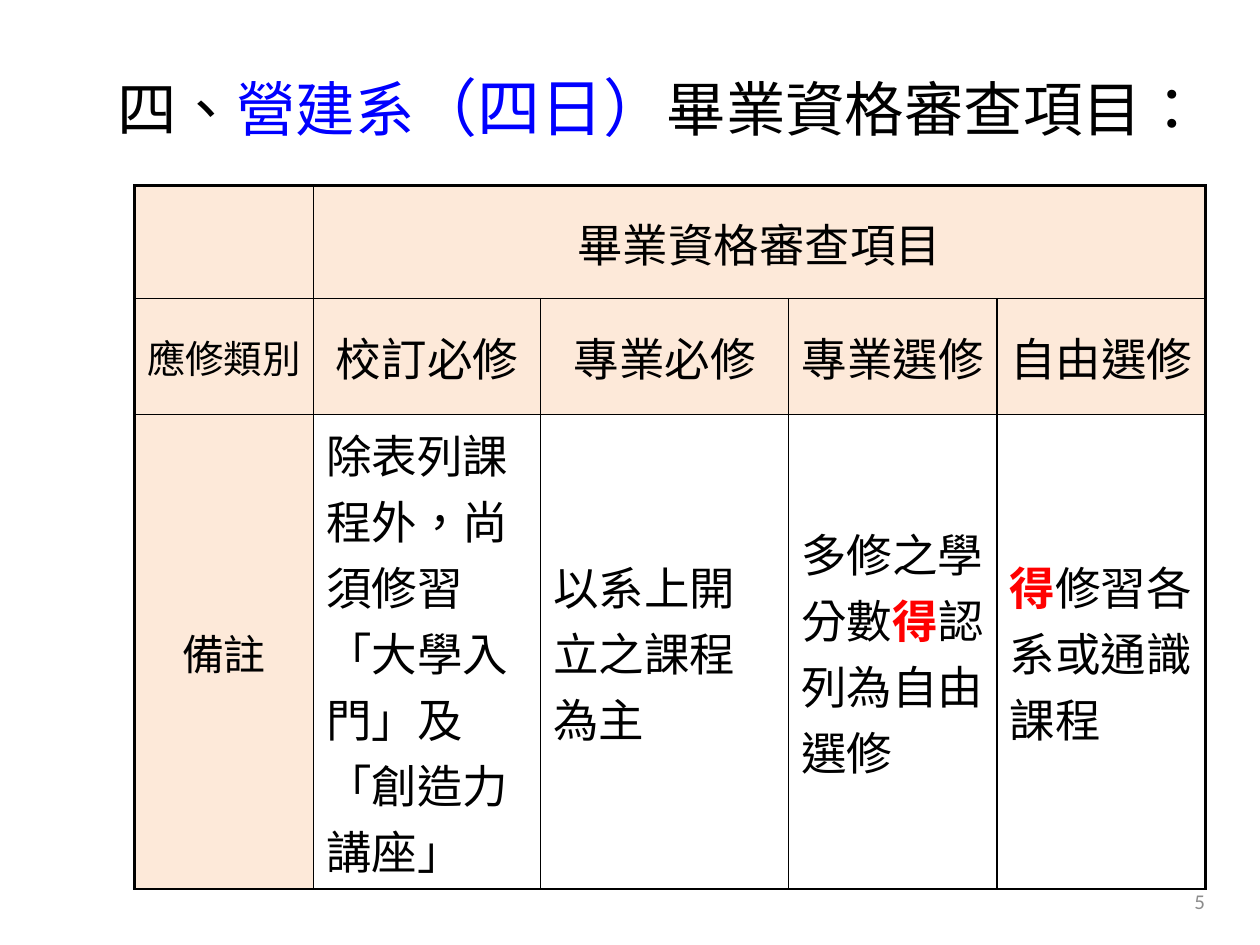
import pptx
import pptx.dml.color
import pptx.enum.lang
import pptx.enum.text
import pptx.oxml
import pptx.oxml.ns
import pptx.util
from pptx.util import Cm

COLORS = {
    "text": "000000",
    "department": "0000FF",
    "emphasis": "FF0000",
    "number": "8C8C8C",
    "header": "FDE9D9",
    "border": "000000",
}
CJK = "Noto Sans CJK JP"
LATIN = "Times New Roman"
LEFT = pptx.enum.text.PP_ALIGN.LEFT
CENTER = pptx.enum.text.PP_ALIGN.CENTER
RIGHT = pptx.enum.text.PP_ALIGN.RIGHT
MIDDLE = pptx.enum.text.MSO_ANCHOR.MIDDLE
COL_WIDTHS = [3.61, 4.58, 5, 4.2, 4.2]
ROW_HEIGHTS = [2.28, 2.34, 9.56]


def rgb(name):
    return pptx.dml.color.RGBColor.from_string(COLORS[name])


def add_run(p, text, size=26, color="text", bold=False, font=LATIN):
    r = p.add_run()
    r.text = text
    r.font.size = pptx.util.Pt(size)
    r.font.bold = bold
    r.font.name = font
    r.font.color.rgb = rgb(color)
    r.font.language_id = pptx.enum.lang.MSO_LANGUAGE_ID.TRADITIONAL_CHINESE
    ea = pptx.oxml.parse_xml(f'<a:ea {pptx.oxml.ns.nsdecls("a")} typeface="{CJK}"/>')
    r.font._element.find(pptx.oxml.ns.qn("a:latin")).addnext(ea)


def add_text_box(s, left, top, width, height, runs, align=LEFT):
    sp = s.shapes.add_textbox(Cm(left), Cm(top), Cm(width), Cm(height))
    tf = sp.text_frame
    tf.word_wrap = True
    tf.vertical_anchor = MIDDLE
    p = tf.paragraphs[0]
    p.alignment = align
    for text, style in runs:
        add_run(p, text, **style)


def set_borders(cell, widths):
    tc_pr = cell._tc.get_or_add_tcPr()
    for i, (side, width) in enumerate(zip("LRTB", widths)):
        line = pptx.oxml.parse_xml(
            f'<a:ln{side} {pptx.oxml.ns.nsdecls("a")} w="{pptx.util.Pt(width)}">'
            f'<a:solidFill><a:srgbClr val="{COLORS["border"]}"/></a:solidFill></a:ln{side}>'
        )
        tc_pr.insert(i, line)


def fill_cell(cell, runs, header):
    if header:
        cell.fill.solid()
        cell.fill.fore_color.rgb = rgb("header")
    else:
        cell.fill.background()
    cell.vertical_anchor = MIDDLE
    p = cell.text_frame.paragraphs[0]
    p.alignment = CENTER if header else LEFT
    for text, style in runs:
        add_run(p, text, **style)


def add_review_table(s, left, top, rows):
    n_rows, n_cols = len(ROW_HEIGHTS), len(COL_WIDTHS)
    table = s.shapes.add_table(
        n_rows, n_cols, Cm(left), Cm(top), Cm(sum(COL_WIDTHS)), Cm(sum(ROW_HEIGHTS))
    ).table
    for col, width in zip(table.columns, COL_WIDTHS):
        col.width = Cm(width)
    for row, height in zip(table.rows, ROW_HEIGHTS):
        row.height = Cm(height)
    table.cell(0, 1).merge(table.cell(0, n_cols - 1))
    for i, row in enumerate(rows):
        for j, runs in enumerate(row):
            cell = table.cell(i, j)
            fill_cell(cell, runs, header=i < 2 or j == 0)
            last = j == n_cols - 1 or cell.is_merge_origin
            outer = [j == 0, last, i == 0, i == n_rows - 1]
            set_borders(cell, [1.5 if edge else 1 for edge in outer])


def main():
    prs = pptx.Presentation()
    prs.slide_width, prs.slide_height = Cm(25.4), Cm(19.05)
    s = prs.slides.add_slide(prs.slide_layouts[6])

    add_text_box(s, 18.62, 17.65, 5.92, 1.02,
                 [("5", dict(size=12, color="number", font="Calibri"))], RIGHT)

    red = dict(color="emphasis", bold=True)
    add_review_table(s, 2.71, 3.74, [
        [[], [("畢業資格審查項目", {})], [], [], []],
        [[("應修類別", dict(size=22))]]
        + [[(kind, {})] for kind in ("校訂必修", "專業必修", "專業選修", "自由選修")],
        [
            [("備註", dict(size=24))],
            [("除表列課程外，尚須修習「大學入門」及「創造力講座」", {})],
            [("以系上開立之課程為主", {})],
            [("多修之學分數", {}), ("得", red), ("認列為自由選修", {})],
            [("得", red), ("修習各系或通識課程", {})],
        ],
    ])

    add_text_box(s, 2.12, 0.76, 22.43, 2.77, [
        ("四、", dict(size=34, font=CJK)),
        ("營建系", dict(size=34, color="department", font=CJK)),
        ("（四日）", dict(size=36, color="department", font=CJK)),
        ("畢業資格審查項目：", dict(size=34, font=CJK)),
    ])
    prs.save("out.pptx")


if __name__ == "__main__":
    main()
